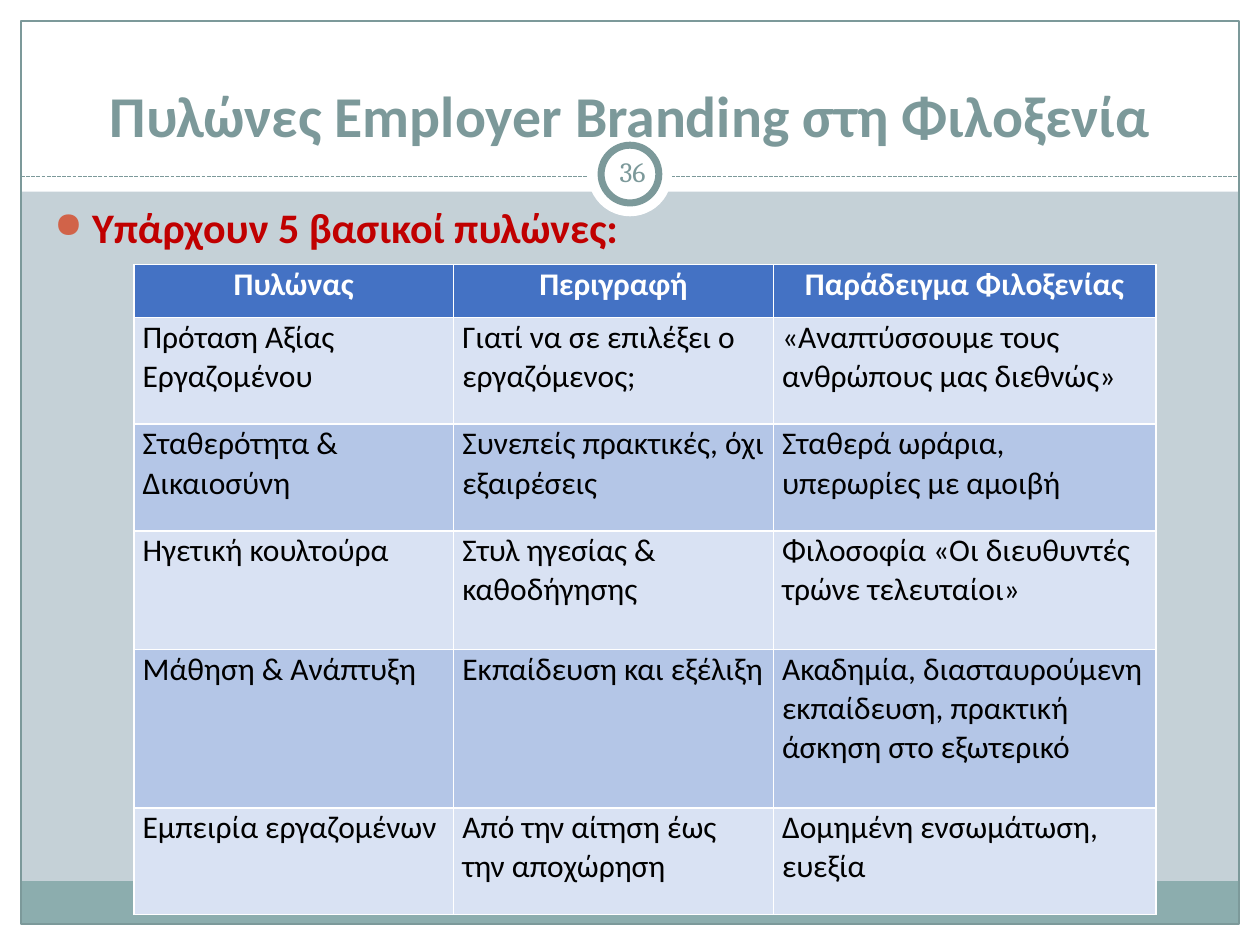
from lxml import etree
from pptx import Presentation
from pptx.dml.color import RGBColor
from pptx.enum.dml import MSO_LINE
from pptx.enum.shapes import MSO_CONNECTOR, MSO_SHAPE
from pptx.enum.text import MSO_ANCHOR, PP_ALIGN
from pptx.oxml.ns import qn
from pptx.util import Pt

RECT, OVAL = MSO_SHAPE.RECTANGLE, MSO_SHAPE.OVAL
LINE = MSO_CONNECTOR.STRAIGHT
DASH = MSO_LINE.SQUARE_DOT
TOP, MID, LOW = MSO_ANCHOR.TOP, MSO_ANCHOR.MIDDLE, MSO_ANCHOR.BOTTOM
LEFT, MIDST = PP_ALIGN.LEFT, PP_ALIGN.CENTER

WHITE, BLACK, SAGE, TEAL = "FFFFFF", "000000", "7C999A", "8CADAE"
MIST, RED, RUST = "C5D1D7", "C00000", "D16349"
HEAD, BANDS = "4472C4", ("D9E2F3", "B4C6E7")

WIDE, HIGH, EDGE = 720, 540, 12

COLS = (182.7, 182.7, 218.6)
ROWS = (30.4, 61, 61, 67.7, 90.7, 61)
CELLS = (
    ("Πυλώνας", "Περιγραφή", "Παράδειγμα Φιλοξενίας"),
    ("Πρόταση Αξίας Εργαζομένου", "Γιατί να σε επιλέξει ο εργαζόμενος;",
     "«Αναπτύσσουμε τους ανθρώπους μας διεθνώς»"),
    ("Σταθερότητα & Δικαιοσύνη", "Συνεπείς πρακτικές, όχι εξαιρέσεις",
     "Σταθερά ωράρια, υπερωρίες με αμοιβή"),
    ("Ηγετική κουλτούρα", "Στυλ ηγεσίας & καθοδήγησης",
     "Φιλοσοφία «Οι διευθυντές τρώνε τελευταίοι»"),
    ("Μάθηση & Ανάπτυξη", "Εκπαίδευση και εξέλιξη",
     "Ακαδημία, διασταυρούμενη εκπαίδευση, πρακτική άσκηση στο εξωτερικό"),
    ("Εμπειρία εργαζομένων", "Από την αίτηση έως την αποχώρηση",
     "Δομημένη ενσωμάτωση, ευεξία"),
)


def paint(hue):
    return RGBColor.from_string(hue)


def node(home, tag, **attrs):
    return etree.SubElement(home, qn(tag), attrs)


class Deck:
    font = "Calibri"

    def __init__(self):
        self.prs = Presentation()
        self.prs.slide_width, self.prs.slide_height = Pt(WIDE), Pt(HIGH)
        self.slide = self.prs.slides.add_slide(self.prs.slide_layouts[6])
        self.items = self.slide.shapes

    def ground(self, hue):
        fill = self.slide.background.fill
        fill.solid()
        fill.fore_color.rgb = paint(hue)

    def shape(self, kind, box, fill=None, line=None, width=0.75):
        item = self.items.add_shape(kind, *map(Pt, box))
        item.shadow.inherit = False
        if fill:
            item.fill.solid()
            item.fill.fore_color.rgb = paint(fill)
        else:
            item.fill.background()
        if line:
            item.line.color.rgb = paint(line)
            item.line.width = Pt(width)
        else:
            item.line.fill.background()

    def rule(self, x, y, end, hue):
        item = self.items.add_connector(LINE, Pt(x), Pt(y), Pt(end), Pt(y))
        item.line.color.rgb = paint(hue)
        item.line.width = Pt(0.75)
        item.line.dash_style = DASH
        node(item._element.spPr, "a:effectLst")

    def words(self, para, text, size, hue, bold=False, font=None):
        run = para.add_run()
        run.text = text
        run.font.name = font or self.font
        run.font.size, run.font.bold = Pt(size), bold
        run.font.color.rgb = paint(hue)

    def text(self, box, anchor=TOP, align=LEFT, pad=(7.2, 3.6)):
        frame = self.items.add_textbox(*map(Pt, box)).text_frame
        frame.word_wrap = True
        frame.vertical_anchor = anchor
        frame.margin_left = frame.margin_right = Pt(pad[0])
        frame.margin_top = frame.margin_bottom = Pt(pad[1])
        para = frame.paragraphs[0]
        para.alignment = align
        return para

    def bullet(self, para, hue, dent):
        para.space_before = Pt(4.8)
        props = para._p.get_or_add_pPr()
        props.set("marL", str(Pt(dent)))
        props.set("indent", str(-Pt(dent)))
        node(node(props, "a:buClr"), "a:srgbClr", val=hue)
        node(props, "a:buSzPct", val="85000")
        node(props, "a:buChar", char="●")

    def cell(self, cell, text, fill, hue, bold, align):
        props = cell._tc.get_or_add_tcPr()
        for side in "LRTB":
            edge = node(props, f"a:ln{side}", w=str(Pt(1)))
            node(node(edge, "a:solidFill"), "a:srgbClr", val=WHITE)
        cell.fill.solid()
        cell.fill.fore_color.rgb = paint(fill)
        cell.margin_left = cell.margin_right = Pt(5)
        cell.margin_top = cell.margin_bottom = 0
        para = cell.text_frame.paragraphs[0]
        para.alignment, para.line_spacing = align, 1.02
        self.words(para, text, 18, hue, bold)

    def table(self, x, y):
        size = map(Pt, (x, y, sum(COLS), sum(ROWS)))
        grid = self.items.add_table(len(ROWS), len(COLS), *size).table
        for col, width in zip(grid.columns, COLS):
            col.width = Pt(width)
        for r, (row, high) in enumerate(zip(grid.rows, ROWS)):
            row.height = Pt(high)
            look = (BANDS[(r - 1) % 2], BLACK, False, LEFT)
            if r == 0:
                look = (HEAD, WHITE, True, MIDST)
            for cell, text in zip(row.cells, CELLS[r]):
                self.cell(cell, text, *look)


def main():
    deck = Deck()
    inner = WIDE - 2 * EDGE

    # White margins, header and footer bands
    deck.ground(MIST)
    for box in ((0, HIGH - EDGE, WIDE, EDGE), (0, 0, WIDE, 109.5),
                (0, 0, EDGE, HIGH), (WIDE - EDGE, 0, EDGE, HIGH)):
        deck.shape(RECT, box, WHITE)
    deck.shape(RECT, (EDGE, 503.5, inner, 24.5), TEAL)
    deck.shape(RECT, (EDGE, EDGE, inner, HIGH - 2 * EDGE), line=SAGE)
    deck.rule(EDGE, 100.8, WIDE - EDGE, SAGE)

    # Number badge
    deck.shape(OVAL, (336, 75.6, 48, 48), WHITE)
    deck.shape(OVAL, (343.5, 83, 33, 33), WHITE, SAGE, 4)

    # Title
    title = deck.text((24, 18, 672, 70.5), LOW, MIDST)
    deck.words(title, "Πυλώνες Employer Branding στη Φιλοξενία", 33, SAGE, True)

    # Lead line
    lead = deck.text((24, 111.6, 669.6, 41.8))
    deck.bullet(lead, RUST, 21.6)
    deck.words(lead, "Υπάρχουν 5 βασικοί πυλώνες:", 24, RED, True)

    # Slide number
    count = deck.text((343.5, 80.6, 36, 34.6), MID, MIDST, (3.6, 3.6))
    deck.words(count, "36", 16, SAGE, font="Cambria")

    # Pillars
    deck.table(76.5, 151)
    deck.prs.save("out.pptx")


if __name__ == "__main__":
    main()
